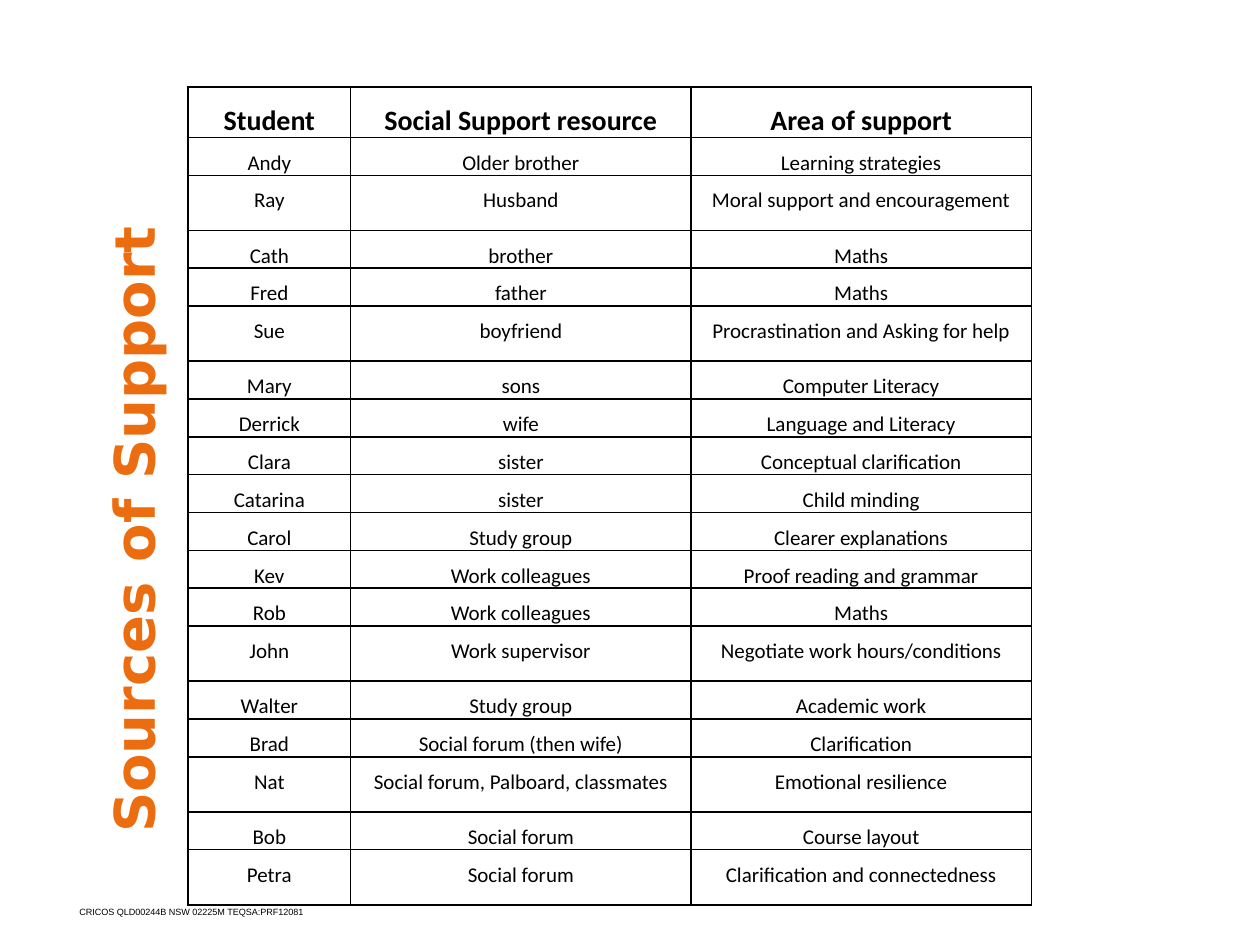
"""Build the slide listing each student's sources of social support."""
from lxml.etree import SubElement
from pptx import Presentation
from pptx.dml.color import RGBColor
from pptx.enum.text import MSO_ANCHOR, MSO_AUTO_SIZE, PP_ALIGN
from pptx.oxml.ns import qn
from pptx.util import Cm, Pt

TITLE = "Sources of Support"
REGISTRATION = "CRICOS QLD00244B NSW 02225M TEQSA:PRF12081"
HEADER = ("Student", "Social Support resource", "Area of support")
SUPPORT = [
    ("Andy", "Older brother", "Learning strategies"),
    ("Ray", "Husband", "Moral support and encouragement"),
    ("Cath", "brother", "Maths"),
    ("Fred", "father", "Maths"),
    ("Sue", "boyfriend", "Procrastination and Asking for help"),
    ("Mary", "sons", "Computer Literacy"),
    ("Derrick", "wife", "Language and Literacy"),
    ("Clara", "sister", "Conceptual clarification"),
    ("Catarina", "sister", "Child minding"),
    ("Carol", "Study group", "Clearer explanations"),
    ("Kev", "Work colleagues", "Proof reading and grammar"),
    ("Rob", "Work colleagues", "Maths"),
    ("John", "Work supervisor", "Negotiate work hours/conditions"),
    ("Walter", "Study group", "Academic work"),
    ("Brad", "Social forum (then wife)", "Clarification"),
    ("Nat", "Social forum, Palboard, classmates", "Emotional resilience"),
    ("Bob", "Social forum", "Course layout"),
    ("Petra", "Social forum", "Clarification and connectedness"),
]
TALL_ROWS = {"Ray", "Sue", "John", "Nat", "Petra"}
COLUMN_WIDTHS = (3.28, 6.86, 6.86)
HEADER_HEIGHT, ROW_HEIGHT, TALL_HEIGHT = 1.02, 0.76, 1.11
TITLE_CENTER_X, TITLE_CENTER_Y = 2.67, 9.59
TITLE_LENGTH, TITLE_THICKNESS = 14.91, 1.93
COLORS = {"title": "EC6C10", "text": "000000", "border": "000000"}


def set_font(paragraph, name, size, color, bold=False):
    font = paragraph.font
    font.name, font.size, font.bold = name, Pt(size), bold
    font.color.rgb = RGBColor.from_string(COLORS[color])


def add_borders(cell):
    properties = cell._tc.get_or_add_tcPr()
    for position, side in enumerate(("lnL", "lnR", "lnT", "lnB")):
        line = SubElement(properties, qn(f"a:{side}"), w=str(Pt(1)))
        fill = SubElement(line, qn("a:solidFill"))
        SubElement(fill, qn("a:srgbClr"), val=COLORS["border"])
        properties.insert(position, line)


def add_title(slide):
    title = slide.shapes.title
    title.left = Cm(TITLE_CENTER_X - TITLE_LENGTH / 2)
    title.top = Cm(TITLE_CENTER_Y - TITLE_THICKNESS / 2)
    title.width, title.height = Cm(TITLE_LENGTH), Cm(TITLE_THICKNESS)
    title.rotation = 270
    frame = title.text_frame
    frame.text = TITLE
    frame.word_wrap = True
    frame.auto_size = MSO_AUTO_SIZE.NONE
    frame.vertical_anchor = MSO_ANCHOR.MIDDLE
    frame.paragraphs[0].alignment = PP_ALIGN.LEFT
    set_font(frame.paragraphs[0], "DejaVu Sans", 32, "title", True)


def add_registration(slide):
    frame = slide.shapes.add_textbox(Cm(1.35), Cm(18.11), Cm(6.93), Cm(0.51)).text_frame
    frame.text = REGISTRATION
    frame.word_wrap = True
    frame.auto_size = MSO_AUTO_SIZE.SHAPE_TO_FIT_TEXT
    paragraph = frame.paragraphs[0]
    set_font(paragraph, "Arial", 9, "text")
    paragraph.runs[0].font._element.set("baseline", "30000")


def add_support_table(slide):
    rows = [HEADER, *SUPPORT]
    heights = [HEADER_HEIGHT] + [
        TALL_HEIGHT if student in TALL_ROWS else ROW_HEIGHT for student, _, _ in SUPPORT
    ]
    table = slide.shapes.add_table(
        len(rows), len(HEADER), Cm(3.79), Cm(1.75), Cm(sum(COLUMN_WIDTHS)), Cm(sum(heights))
    ).table
    table.first_row = table.horz_banding = False
    for column, width in zip(table.columns, COLUMN_WIDTHS):
        column.width = Cm(width)
    for index, (row, texts) in enumerate(zip(table.rows, rows)):
        row.height = Cm(heights[index])
        for cell, text in zip(row.cells, texts):
            cell.text = text
            cell.margin_left = cell.margin_right = Cm(0.13)
            cell.margin_top = cell.margin_bottom = 0
            cell.fill.background()
            add_borders(cell)
            paragraph = cell.text_frame.paragraphs[0]
            paragraph.alignment = PP_ALIGN.CENTER
            paragraph.line_spacing = 1.5
            set_font(paragraph, "Calibri", 12 if index else 16, "text", index == 0)


def main():
    presentation = Presentation()
    presentation.slide_width, presentation.slide_height = Cm(25.4), Cm(19.05)
    slide = presentation.slides.add_slide(presentation.slide_layouts[5])
    add_registration(slide)
    add_title(slide)
    add_support_table(slide)
    presentation.save("out.pptx")


if __name__ == "__main__":
    main()
